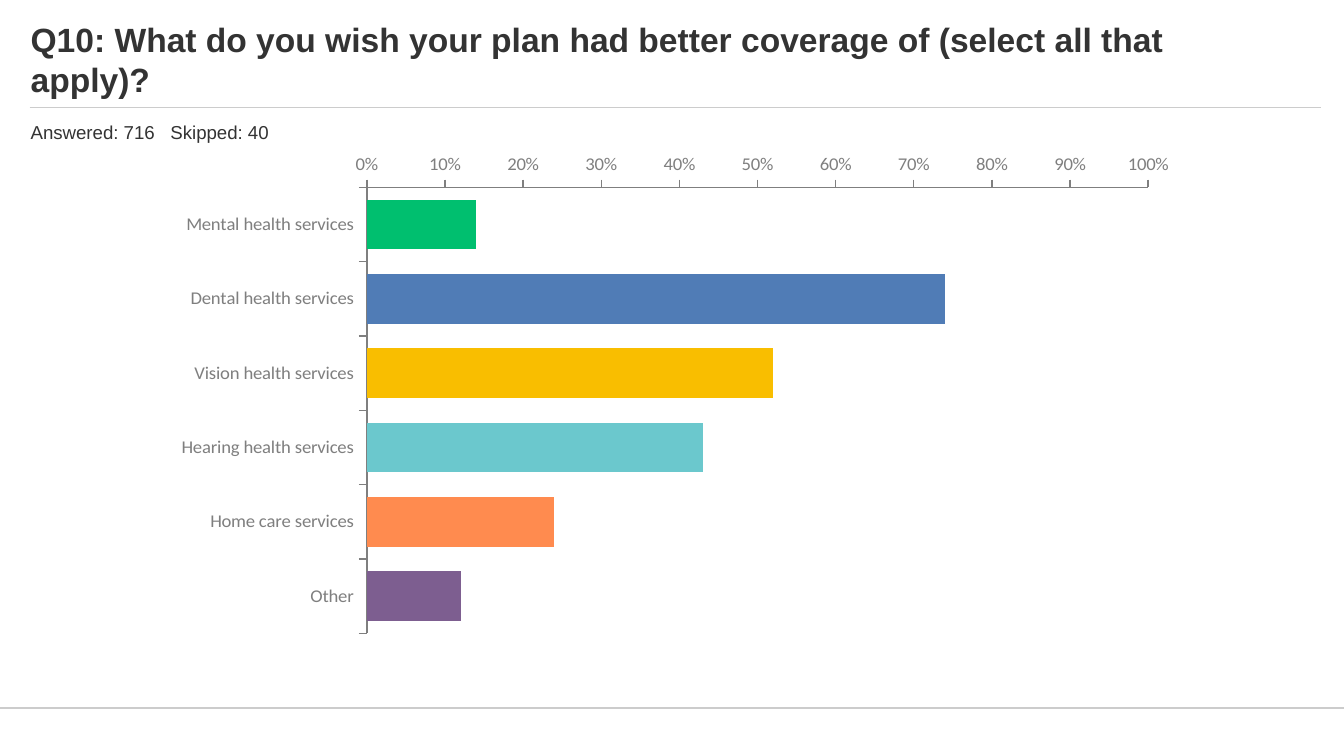
"""Build the survey slide for question 10 with its bar chart of answers."""
import lxml.etree
import pptx
import pptx.chart.data
import pptx.dml.color
import pptx.enum.chart
import pptx.enum.shapes
import pptx.enum.text
import pptx.oxml
import pptx.oxml.ns
import pptx.util
from pptx.util import Inches

COLORS = {"text": "333333", "rule": "CCCCCC", "axis": "7F7F7F"}
ANSWERS = [
    ("Mental health services", 0.14, "00BF6F"),
    ("Dental health services", 0.74, "507CB6"),
    ("Vision health services", 0.52, "F9BE00"),
    ("Hearing health services", 0.43, "6BC8CD"),
    ("Home care services", 0.24, "FF8B4F"),
    ("Other", 0.12, "7D5E90"),
]
qn = pptx.oxml.ns.qn


def rgb(value):
    return pptx.dml.color.RGBColor.from_string(value)


def add_text(slide, text, left, top, width, height, size, bold=False,
             anchor=pptx.enum.text.MSO_ANCHOR.TOP, space_before=0, tab=None):
    shape = slide.shapes.add_textbox(Inches(left), Inches(top), Inches(width), Inches(height))
    frame = shape.text_frame
    frame.word_wrap = True
    frame.vertical_anchor = anchor
    paragraph = frame.paragraphs[0]
    paragraph.space_before = pptx.util.Pt(space_before)
    run = paragraph.add_run()
    run.text = text
    run.font.name = "Arial"
    run.font.size = pptx.util.Pt(size)
    run.font.bold = bold
    run.font.color.rgb = rgb(COLORS["text"])
    if tab:
        properties = paragraph._p.get_or_add_pPr()
        stops = lxml.etree.SubElement(properties, qn("a:tabLst"))
        lxml.etree.SubElement(stops, qn("a:tab"), pos=str(Inches(tab)), algn="l")


presentation = pptx.Presentation()
presentation.slide_width = Inches(10)
presentation.slide_height = Inches(10 * 9 / 16)
slide = presentation.slides.add_slide(presentation.slide_layouts[6])

for left, right, top, weight in [(0, 10, 5.27, 1), (0.22, 9.83, 0.8, 0.5)]:
    rule = slide.shapes.add_connector(
        pptx.enum.shapes.MSO_CONNECTOR.STRAIGHT,
        Inches(left), Inches(top), Inches(right), Inches(top))
    rule.line.color.rgb = rgb(COLORS["rule"])
    rule.line.width = pptx.util.Pt(weight)
    lxml.etree.SubElement(rule._element.spPr, qn("a:effectLst"))

add_text(slide, "Q10: What do you wish your plan had better coverage of (select all that apply)?",
         0.13, 0.36, 9, 0.43, size=18, bold=True, anchor=pptx.enum.text.MSO_ANCHOR.BOTTOM)
add_text(slide, "Answered: 716\tSkipped: 40", 0.13, 0.85, 9, 0.26,
         size=10, space_before=2, tab=1.04)

chart_data = pptx.chart.data.CategoryChartData(number_format="0%")
chart_data.categories = [name for name, share, color in ANSWERS]
chart_data.add_series("Series 1", [share for name, share, color in ANSWERS])
chart = slide.shapes.add_chart(
    pptx.enum.chart.XL_CHART_TYPE.BAR_CLUSTERED,
    Inches(1.2), Inches(1.15), Inches(7.65), Inches(3.9), chart_data).chart
chart.has_legend = False
chart.has_title = False
chart.font.name = "Calibri"
chart.font.size = pptx.util.Pt(18)
chart.font.color.rgb = rgb(COLORS["text"])

plot = chart.plots[0]
plot.gap_width = 50
plot.overlap = 100
plot.vary_by_categories = False
series = plot.series[0]
series.invert_if_negative = False
series.format.fill.solid()
series.format.fill.fore_color.rgb = rgb(ANSWERS[0][2])
for index, (name, share, color) in enumerate(ANSWERS):
    fill = series.points[index].format.fill
    fill.solid()
    fill.fore_color.rgb = rgb(color)

for axis in (chart.category_axis, chart.value_axis):
    axis.has_major_gridlines = False
    axis.major_tick_mark = pptx.enum.chart.XL_TICK_MARK.OUTSIDE
    axis.minor_tick_mark = pptx.enum.chart.XL_TICK_MARK.NONE
    axis.format.line.color.rgb = rgb(COLORS["axis"])
    axis.format.line.width = pptx.util.Pt(0.75)
    axis.tick_labels.font.name = "Calibri"
    axis.tick_labels.font.size = pptx.util.Pt(10)
    axis.tick_labels.font.color.rgb = rgb(COLORS["axis"])
chart.category_axis.reverse_order = True
chart.category_axis.crosses = pptx.enum.chart.XL_AXIS_CROSSES.MINIMUM
chart.category_axis.tick_label_position = pptx.enum.chart.XL_TICK_LABEL_POSITION.LOW
chart.value_axis.minimum_scale = 0
chart.value_axis.maximum_scale = 1
chart.value_axis.major_unit = 0.1
chart.value_axis.tick_labels.number_format = "0%"
chart.value_axis.tick_labels.number_format_is_linked = False

plot_area = chart._chartSpace.chart.plotArea
for layout in plot_area.findall(qn("c:layout")):
    plot_area.remove(layout)
layout = lxml.etree.Element(qn("c:layout"))
plot_area.insert(0, layout)
manual_layout = lxml.etree.SubElement(layout, qn("c:manualLayout"))
for tag, value in [("layoutTarget", "inner"), ("xMode", "edge"), ("yMode", "edge"),
                   ("x", "0.2"), ("y", "0.02"), ("w", "0.76"), ("h", "0.89")]:
    lxml.etree.SubElement(manual_layout, qn("c:" + tag), val=value)

presentation.save("out.pptx")
